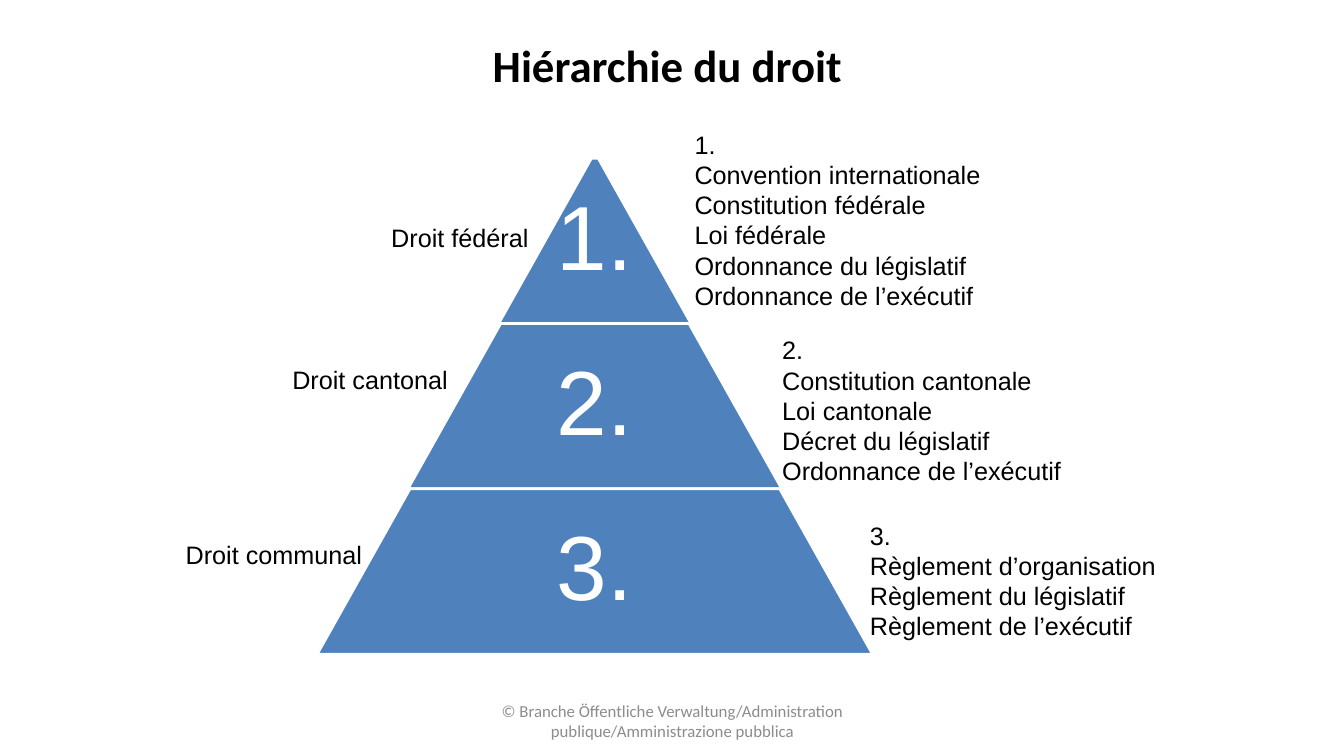
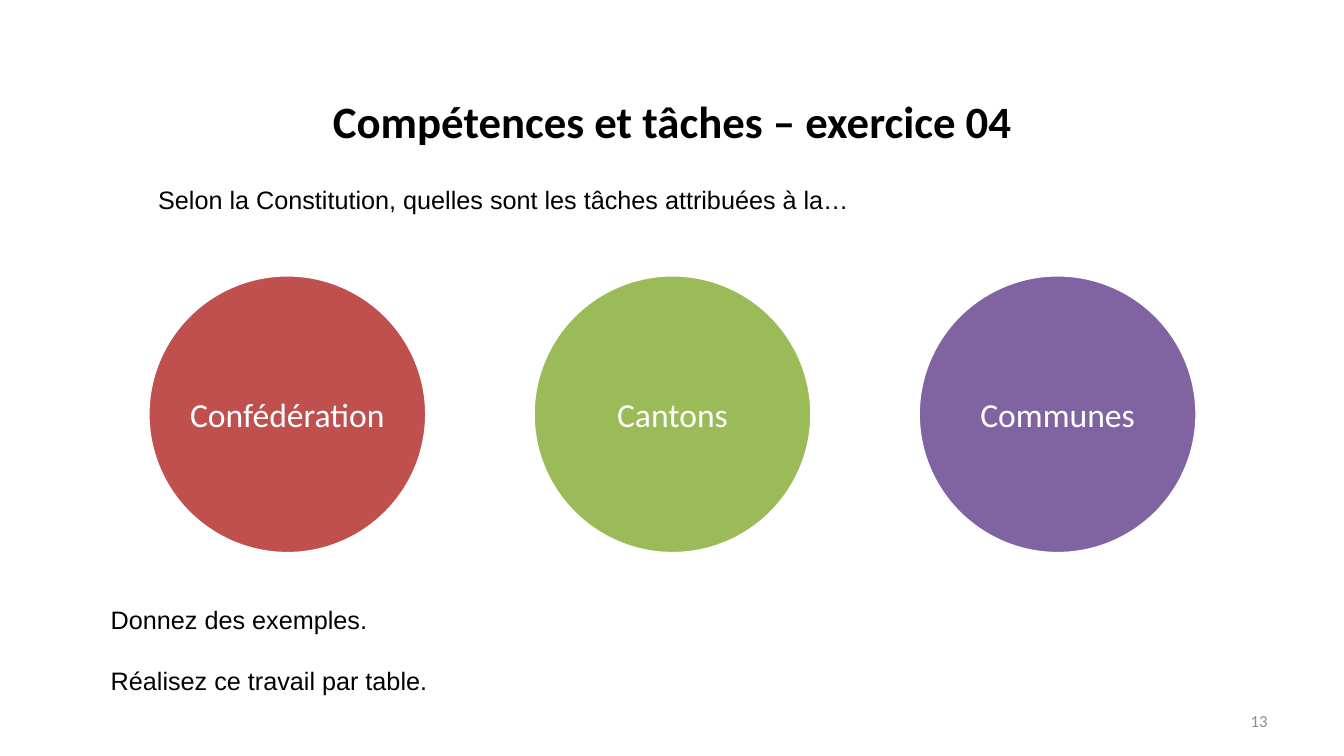
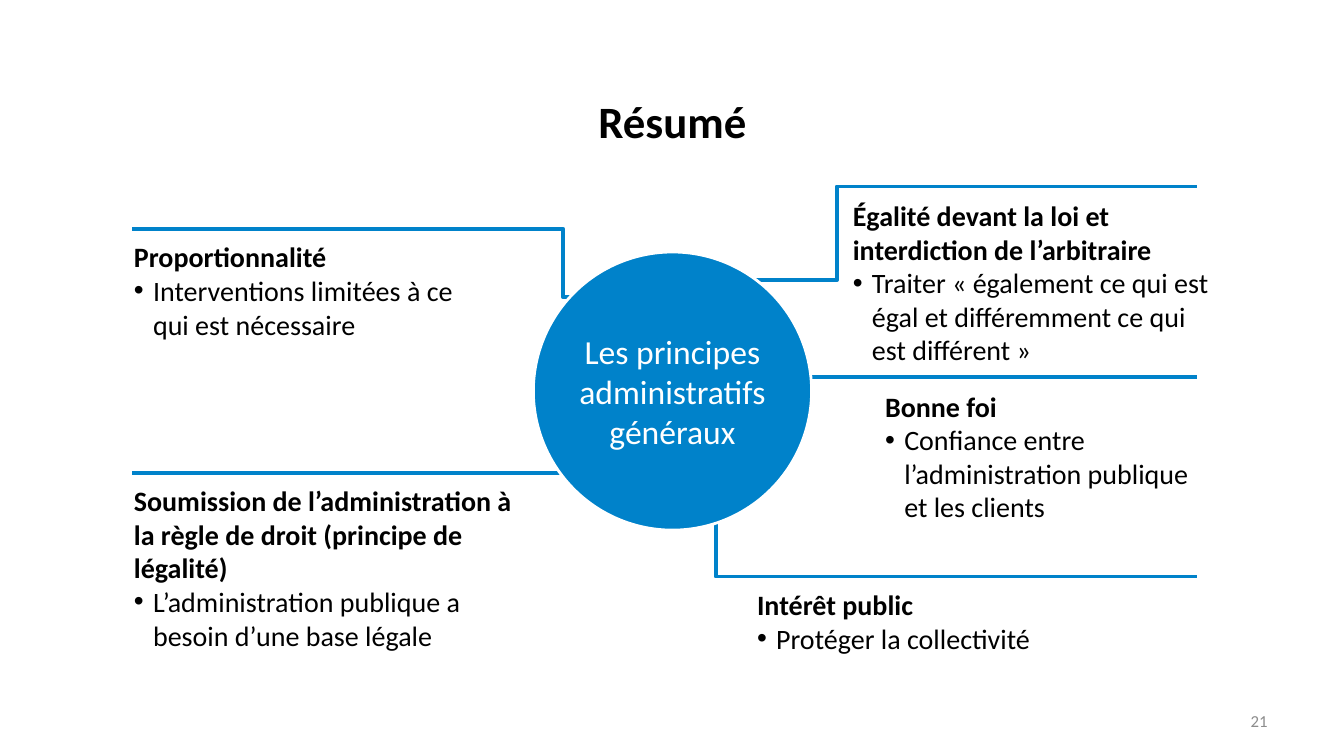
from pptx import Presentation
from pptx.dml.color import RGBColor
from pptx.enum.shapes import MSO_CONNECTOR, MSO_SHAPE
from pptx.enum.text import MSO_ANCHOR, PP_ALIGN
from pptx.oxml.ns import qn
from pptx.util import Inches, Pt
from lxml.etree import SubElement

COLORS = {
    "black": "000000",
    "white": "FFFFFF",
    "grey": "8C8C8C",
    "blue": "4F81BD",
    "red": "C0504D",
    "green": "9BBB59",
    "purple": "8064A2",
    "cyan": "0082CA",
}
HEADING_FONT = "Calibri"
BODY_FONT = "Arial"
DISC = 2.76


def rgb(name):
    return RGBColor.from_string(COLORS[name])


def inches(*lengths):
    return [Inches(length) for length in lengths]


def style(paragraph, size, font, color="black", bold=False, align=PP_ALIGN.LEFT):
    paragraph.alignment = align
    for run in paragraph.runs:
        run.font.size = Pt(size)
        run.font.name = font
        run.font.bold = bold
        run.font.color.rgb = rgb(color)


def add_text(slide, box, text, size=18, font=BODY_FONT, color="black",
             align=PP_ALIGN.LEFT, anchor=MSO_ANCHOR.TOP):
    frame = slide.shapes.add_textbox(*inches(*box)).text_frame
    frame.word_wrap = True
    frame.vertical_anchor = anchor
    frame.text = text
    for paragraph in frame.paragraphs:
        style(paragraph, size, font, color, align=align)
    return frame


def add_titled_slide(prs, title, top=0.84):
    slide = prs.slides.add_slide(prs.slide_layouts[5])
    heading = slide.shapes.title
    heading.left, heading.top, heading.width, heading.height = inches(0.67, top, 12, 0.71)
    frame = heading.text_frame
    frame.vertical_anchor = MSO_ANCHOR.MIDDLE
    frame.text = title
    style(frame.paragraphs[0], 32, HEADING_FONT, bold=True, align=PP_ALIGN.CENTER)
    return slide


def add_footer(slide, left, width, text, align):
    add_text(slide, (left, 6.95, width, 0.4), text, 12, HEADING_FONT, "grey",
             align, MSO_ANCHOR.MIDDLE)


def add_page_number(slide, number):
    add_footer(slide, 9.56, 3.11, number, PP_ALIGN.RIGHT)


def add_filled_shape(slide, preset, box, color):
    shape = slide.shapes.add_shape(preset, *inches(*box))
    shape.shadow.inherit = False
    shape.fill.solid()
    shape.fill.fore_color.rgb = rgb(color)
    shape.line.color.rgb = rgb("white")
    shape.line.width = Pt(2)
    return shape


def add_disc(slide, left, top, text, color):
    frame = add_filled_shape(slide, MSO_SHAPE.OVAL, (left, top, DISC, DISC), color).text_frame
    frame.margin_left = frame.margin_right = frame.margin_top = frame.margin_bottom = 0
    frame.word_wrap = True
    frame.vertical_anchor = MSO_ANCHOR.MIDDLE
    frame.text = text
    style(frame.paragraphs[0], 24, HEADING_FONT, "white", align=PP_ALIGN.CENTER)


def add_line(slide, kind, start, end):
    line = slide.shapes.add_connector(kind, *inches(*start, *end))
    line.line.color.rgb = rgb("cyan")
    line.line.width = Pt(2.75)
    SubElement(line._element.spPr, qn("a:effectLst"))


def add_principle(slide, box, heading, detail):
    frame = add_text(slide, box, f"{heading}\n{detail}", 20, HEADING_FONT)
    title, bullet = frame.paragraphs
    title.runs[0].font.bold = True
    properties = bullet._p.get_or_add_pPr()
    properties.set("marL", str(Inches(0.19)))
    properties.set("indent", str(-Inches(0.19)))
    SubElement(properties, qn("a:buFont")).set("typeface", "Arial")
    SubElement(properties, qn("a:buChar")).set("char", "•")


def add_pyramid(slide, center, top, levels):
    height, top_width, widening = 1.64, 1.91, 1.8
    for index in range(levels):
        width = top_width + index * widening
        box = (center - width / 2, top + index * height, width, height)
        tier = add_filled_shape(slide, MSO_SHAPE.TRAPEZOID, box, "blue")
        tier.adjustments[0] = 0.561
        number = add_text(slide, box, f"{index + 1}.", 65, color="white",
                          align=PP_ALIGN.CENTER, anchor=MSO_ANCHOR.MIDDLE)
        number.margin_left = number.margin_right = Inches(0.09)
        number.margin_top = number.margin_bottom = Inches(0.09)
        number.paragraphs[0].line_spacing = 0.9


def build_hierarchy(prs):
    slide = add_titled_slide(prs, "Hiérarchie du droit ", 0.29)
    add_footer(slide, 4.56, 4.22,
               "© Branche Öffentliche Verwaltung/Administration publique/Amministrazione pubblica",
               PP_ALIGN.CENTER)
    sources = [
        (1.23, 1.92, ["Convention internationale", "Constitution fédérale", "Loi fédérale",
                      "Ordonnance du législatif", "Ordonnance de l’exécutif"]),
        (3.27, 1.62, ["Constitution cantonale", "Loi cantonale", "Décret du législatif",
                      "Ordonnance de l’exécutif"]),
        (5.11, 1.31, ["Règlement d’organisation", "Règlement du législatif",
                      "Règlement de l’exécutif"]),
    ]
    add_pyramid(slide, 5.9, 1.57, len(sources))
    for index, (top, height, texts) in enumerate(sources):
        add_text(slide, (6.79 + index * 0.87, top, 3.2, height),
                 "\n".join([f"{index + 1}."] + texts))
    for right, top, law in [(5.34, 2.16, "Droit fédéral"),
                            (4.54, 3.57, "Droit cantonal"),
                            (3.69, 5.3, "Droit communal")]:
        add_text(slide, (right - 2.1, top, 2.1, 0.4), law, align=PP_ALIGN.RIGHT)


def build_exercise(prs):
    slide = add_titled_slide(prs, "Compétences et tâches – exercice 04")
    add_page_number(slide, "13")
    add_text(slide, (1.47, 1.78, 10.39, 0.4),
             "Selon la Constitution, quelles sont les tâches attribuées à la…")
    authorities = [("Confédération", "red"), ("Cantons", "green"), ("Communes", "purple")]
    for index, (authority, color) in enumerate(authorities):
        add_disc(slide, 1.47 + index * 3.82, 2.73, authority, color)
    instructions = add_text(slide, (1, 5.95, 11.34, 1.01),
                            "Donnez des exemples.\nRéalisez ce travail par table.")
    instructions.paragraphs[1].space_before = Pt(21.6)


def build_summary(prs):
    slide = add_titled_slide(prs, "Résumé")
    add_page_number(slide, "21")
    left, right = 1.31, 11.87
    for start, end in [((left, 2.27), (5.19, 2.27)),
                       ((left, 4.69), (6.15, 4.69)),
                       ((8.74, 1.85), (right, 1.85)),
                       ((8.05, 3.74), (right, 3.74)),
                       ((8.08, 5.72), (right, 5.72))]:
        add_line(slide, MSO_CONNECTOR.STRAIGHT, start, end)
    for start, end in [((4.5, 2.27), (6.67, 2.95)),
                       ((9.74, 1.85), (6.86, 2.78)),
                       ((8.16, 5.72), (6.04, 4.83))]:
        add_line(slide, MSO_CONNECTOR.ELBOW, start, end)
    add_disc(slide, 5.29, 2.5, "Les principes administratifs généraux", "cyan")
    principles = [
        ((1.23, 2.33, 3.43, 1.21), "Proportionnalité",
         "Interventions limitées à ce qui est nécessaire"),
        ((1.23, 4.75, 4.17, 1.46),
         "Soumission de l’administration à la règle de droit (principe de légalité)",
         "L’administration publique a besoin d’une base légale"),
        ((8.36, 1.92, 3.75, 1.44), "Égalité devant la loi et interdiction de l’arbitraire",
         "Traiter « également ce qui est égal et différemment ce qui est différent »"),
        ((8.68, 3.81, 3.35, 1.75), "Bonne foi",
         "Confiance entre l’administration publique et les clients"),
        ((7.41, 5.78, 3.82, 1.12), "Intérêt public", "Protéger la collectivité"),
    ]
    for box, heading, detail in principles:
        add_principle(slide, box, heading, detail)


def main():
    prs = Presentation()
    prs.slide_width, prs.slide_height = inches(13.33, 7.5)
    build_hierarchy(prs)
    build_exercise(prs)
    build_summary(prs)
    prs.save("out.pptx")


if __name__ == "__main__":
    main()
